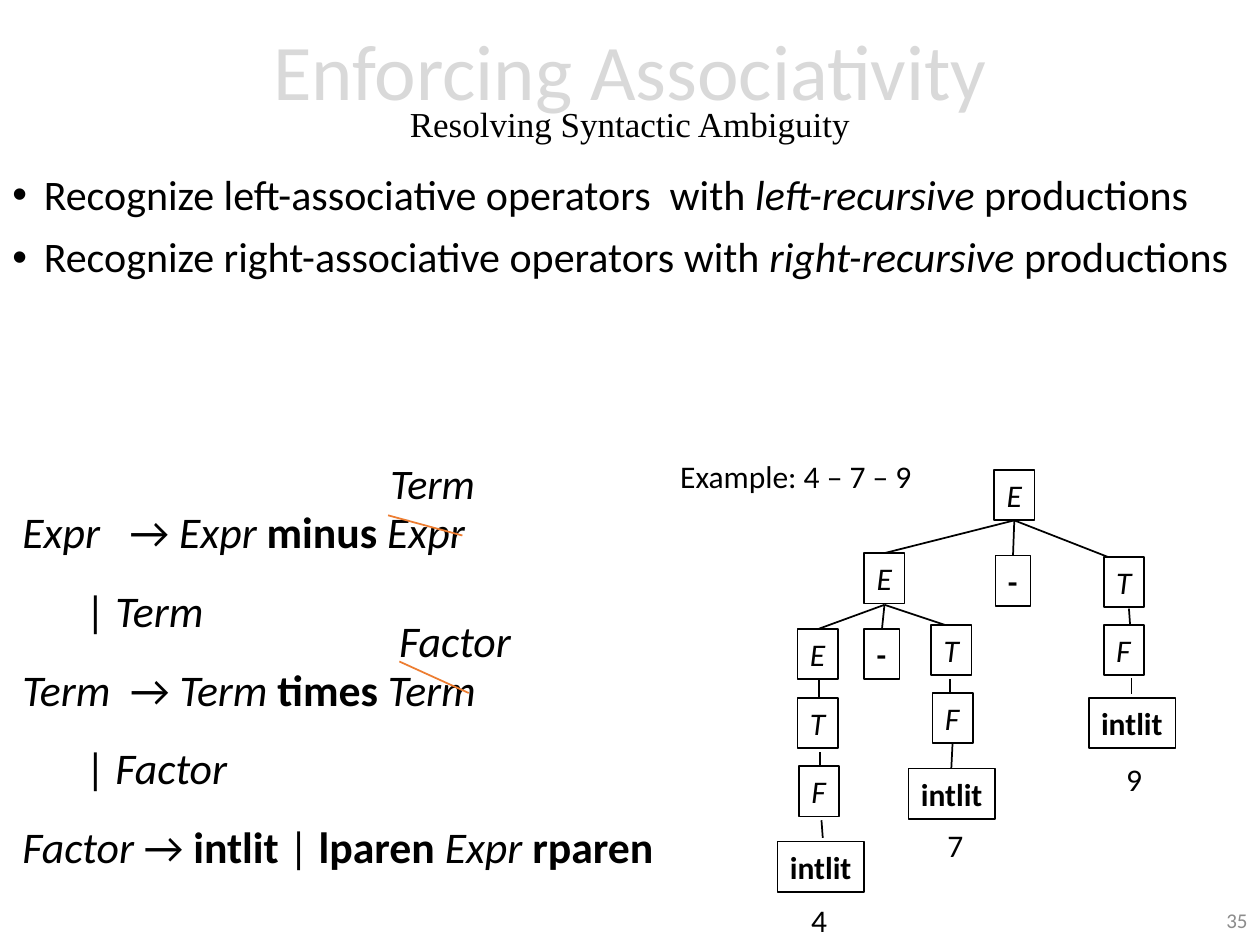
from typing import NamedTuple

from lxml import etree
from pptx import Presentation
from pptx.dml.color import RGBColor
from pptx.enum.shapes import MSO_CONNECTOR, MSO_SHAPE
from pptx.enum.text import MSO_ANCHOR, MSO_AUTO_SIZE, PP_ALIGN
from pptx.oxml.ns import qn
from pptx.util import Cm, Pt

RECT = MSO_SHAPE.RECTANGLE
LINE = MSO_CONNECTOR.STRAIGHT
TOP, MID = MSO_ANCHOR.TOP, MSO_ANCHOR.MIDDLE
LEFT, MIDDLE, RIGHT = PP_ALIGN.LEFT, PP_ALIGN.CENTER, PP_ALIGN.RIGHT
GROW = MSO_AUTO_SIZE.SHAPE_TO_FIT_TEXT
BLACK, WHITE, ORANGE = "000000", "FFFFFF", "ED7D31"
SANS, SERIF = "Calibri", "Times New Roman"


class Run(NamedTuple):
    text: str
    style: str = ""  # "i" italic, "b" bold


class Font(NamedTuple):
    size: float
    face: str = SANS
    tint: str = BLACK


class Label(NamedTuple):
    x: float
    y: float
    wide: float
    high: float
    run: Run
    size: float


class Node(NamedTuple):
    x: float
    y: float
    text: str


class Edge(NamedTuple):
    x1: float
    y1: float
    x2: float
    y2: float
    tint: str = BLACK


def inch(value: float) -> Cm:
    return Cm(value * 2.54)


def color(code: str) -> RGBColor:
    return RGBColor.from_string(code)


def write(para, runs: list[Run], font: Font) -> None:
    for item in runs:
        run = para.add_run()
        run.text = item.text
        run.font.size = Pt(font.size)
        run.font.name = font.face
        run.font.color.rgb = color(font.tint)
        run.font.italic = item.style == "i"
        run.font.bold = item.style == "b"


def add_box(slide, x: float, y: float, wide: float, high: float,
            wrap: bool = True, anchor=TOP):
    box = slide.shapes.add_textbox(inch(x), inch(y), inch(wide), inch(high))
    frame = box.text_frame
    frame.word_wrap = wrap
    frame.vertical_anchor = anchor
    return frame


def add_para(frame, first: bool, runs: list[Run], font: Font,
             space: float = 1, align=LEFT):
    para = frame.paragraphs[0] if first else frame.add_paragraph()
    para.alignment = align
    para.line_spacing = space
    write(para, runs, font)
    return para


def add_label(slide, label: Label) -> None:
    frame = add_box(slide, label.x, label.y, label.wide, label.high, False)
    frame.auto_size = GROW
    add_para(frame, True, [label.run], Font(label.size))


def add_node(slide, node: Node) -> None:
    wide = {"-": 0.28, "intlit": 0.69}.get(node.text, 0.32)
    style = "b" if node.text in ("-", "intlit") else "i"
    box = slide.shapes.add_shape(
        RECT, inch(node.x), inch(node.y), inch(wide), inch(0.4))
    box.shadow.inherit = False
    box.fill.solid()
    box.fill.fore_color.rgb = color(WHITE)
    box.line.color.rgb = color(BLACK)
    box.line.width = Pt(1)
    box.text_frame.word_wrap = False
    box.text_frame.auto_size = GROW
    add_para(box.text_frame, True, [Run(node.text, style)], Font(18))


def add_edge(slide, edge: Edge) -> None:
    line = slide.shapes.add_connector(
        LINE, inch(edge.x1), inch(edge.y1), inch(edge.x2), inch(edge.y2))
    line.line.color.rgb = color(edge.tint)
    line.line.width = Pt(1)
    etree.SubElement(line._element.spPr, qn("a:effectLst"))


def add_bullet(para) -> None:
    props = para._p.get_or_add_pPr()
    props.set("marL", str(inch(0.25)))
    props.set("indent", str(-inch(0.25)))
    etree.SubElement(props, qn("a:buFont"), typeface="Arial")
    etree.SubElement(props, qn("a:buChar"), char="•")


def add_tab(para) -> None:
    tabs = etree.SubElement(para._p.get_or_add_pPr(), qn("a:tabLst"))
    etree.SubElement(tabs, qn("a:tab"), pos=str(inch(0.5)), algn="l")


POINTS = [
    [Run("Recognize left-associative operators  with "),
     Run("left-recursive", "i"), Run(" productions")],
    [Run("Recognize right-associative operators with "),
     Run("right-recursive", "i"), Run(" productions")],
]
RULES = [
    [Run("Expr   ", "i"), Run("→ "), Run("Expr", "i"),
     Run(" minus ", "b"), Run("Expr", "i")],
    [Run("\t"), Run("| "), Run("Term", "i")],
    [Run("Term  ", "i"), Run("→ "), Run("Term ", "i"),
     Run("times ", "b"), Run("Term", "i")],
    [Run("\t"), Run("| "), Run("Factor", "i")],
    [Run("Factor ", "i"), Run("→ "), Run("intlit ", "b"), Run("| "),
     Run("lparen ", "b"), Run("Expr ", "i"), Run("rparen", "b")],
]
LABELS = [
    Label(3, 3.58, 0.89, 0.5, Run("Term", "i"), 24),
    Label(3.07, 4.82, 1.1, 0.52, Run("Factor", "i"), 25),
    Label(5.3, 3.58, 2.06, 0.4, Run("Example: 4 – 7 – 9"), 18),
    Label(6.34, 7.1, 0.33, 0.4, Run("4"), 18),
    Label(7.42, 6.51, 0.33, 0.4, Run("7"), 18),
    Label(8.84, 5.98, 0.33, 0.4, Run("9"), 18),
]
STRIKES = [Edge(3.08, 4.09, 3.67, 4.25, ORANGE),
           Edge(3.17, 5.25, 3.72, 5.5, ORANGE)]
FORKS = [Edge(8.05, 4.13, x, y)
         for x, y in ((7.02, 4.39), (8.04, 4.41), (8.92, 4.47))]
FORKS += [Edge(7.02, 4.8, x, y)
          for x, y in ((6.5, 4.99), (7, 4.99), (7.53, 4.97))]
STEMS = [
    Edge(6.5, 5.39, 6.5, 5.54), Edge(6.51, 5.97, 6.51, 6.1),
    Edge(6.52, 6.51, 6.53, 6.65), Edge(7.54, 5.39, 7.54, 5.52),
    Edge(7.56, 5.9, 7.55, 6.1), Edge(8.96, 4.83, 8.97, 4.97),
    Edge(8.98, 5.38, 8.98, 5.51),
]
NODES = [
    Node(7.89, 3.73, "E"),
    Node(6.86, 4.39, "E"), Node(7.9, 4.41, "-"), Node(8.76, 4.42, "T"),
    Node(6.33, 4.99, "E"), Node(6.86, 4.99, "-"), Node(7.39, 4.96, "T"),
    Node(6.33, 5.54, "T"), Node(6.34, 6.08, "F"), Node(6.17, 6.68, "intlit"),
    Node(7.4, 5.5, "F"), Node(7.21, 6.1, "intlit"),
    Node(8.76, 4.96, "F"), Node(8.64, 5.54, "intlit"),
]


def main() -> None:
    deck = Presentation()
    deck.slide_width, deck.slide_height = inch(10), inch(7.5)
    slide = deck.slides.add_slide(deck.slide_layouts[6])

    # Title and subtitle
    head = add_box(slide, 0, 0.03, 10, 1.45, anchor=MID)
    add_para(head, True, [Run("Enforcing Associativity")],
             Font(45, tint="D9D9D9"), 0.7, MIDDLE)
    add_para(head, False, [Run("Resolving Syntactic Ambiguity")],
             Font(20, SERIF), 0.7, MIDDLE)

    # Bullet points
    body = add_box(slide, 0, 1.33, 10, 4.95)
    for row, runs in enumerate(POINTS):
        para = add_para(body, row == 0, runs, Font(24), 0.9)
        para.space_before = Pt(10)
        add_bullet(para)

    # Grammar
    rules = add_box(slide, 0.08, 3.75, 6, 3.26)
    for row, runs in enumerate(RULES):
        add_tab(add_para(rules, row == 0, runs, Font(25), 1.5))

    # Parse tree, struck-out symbols and labels
    for edge in STRIKES + FORKS + STEMS:
        add_edge(slide, edge)
    for node in NODES:
        add_node(slide, node)
    for label in LABELS:
        add_label(slide, label)

    # Page number
    foot = add_box(slide, 7.75, 7.1, 2.25, 0.4, anchor=MID)
    add_para(foot, True, [Run("35")], Font(12, tint="8C8C8C"), align=RIGHT)

    deck.save("out.pptx")


if __name__ == "__main__":
    main()
